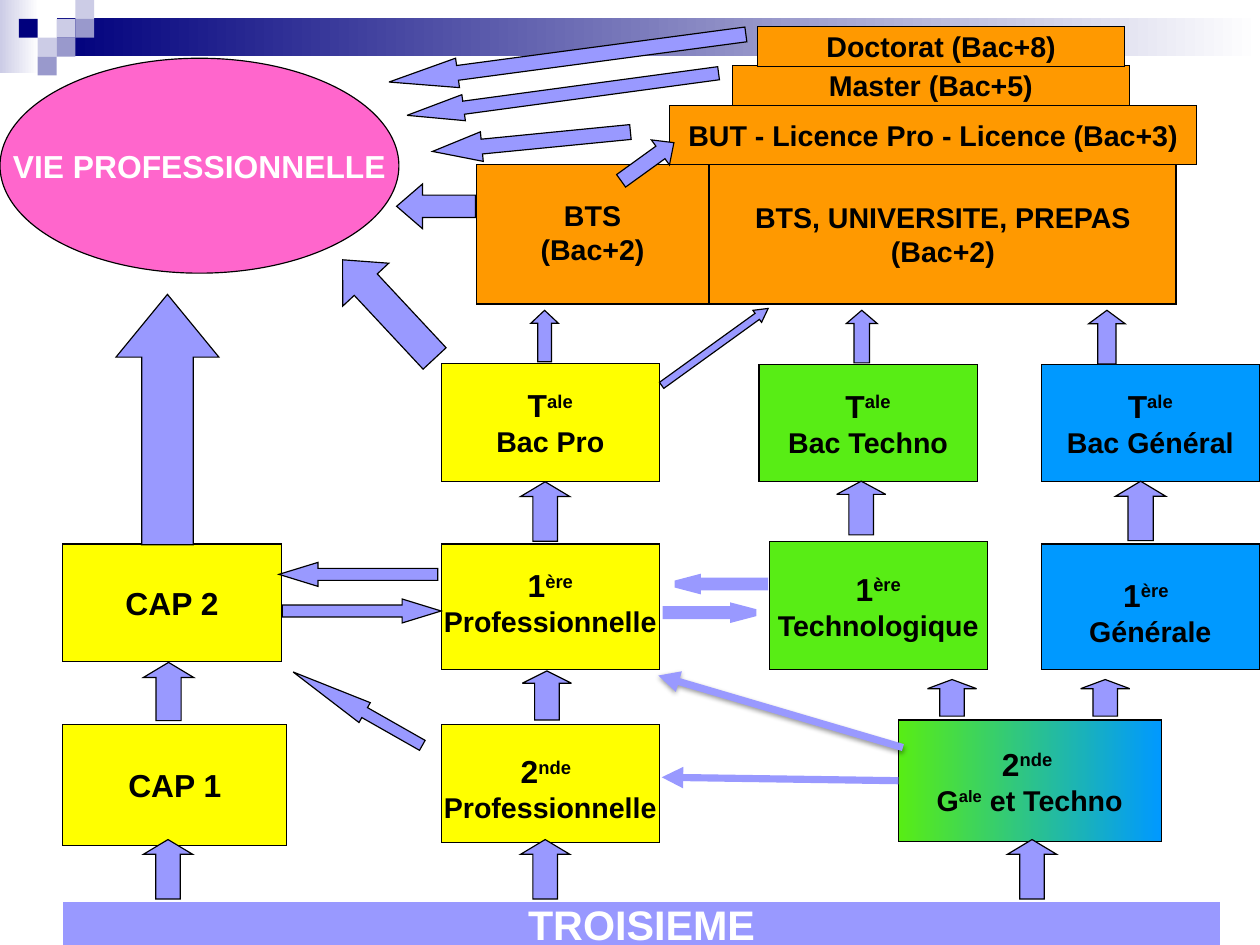
import lxml.etree
import pptx
import pptx.dml.color
import pptx.enum.shapes
import pptx.enum.text
import pptx.oxml
import pptx.oxml.ns
import pptx.util

Inches = pptx.util.Inches
Pt = pptx.util.Pt
RGBColor = pptx.dml.color.RGBColor
SHAPE = pptx.enum.shapes.MSO_SHAPE

BLACK = RGBColor(0x00, 0x00, 0x00)
WHITE = RGBColor(0xFF, 0xFF, 0xFF)
NAVY = RGBColor(0x00, 0x00, 0x7D)
PALE = RGBColor(0xCC, 0xCC, 0xE6)
SLATE = RGBColor(0x99, 0x99, 0xCC)
LILAC = RGBColor(0x99, 0x99, 0xFF)
YELLOW = RGBColor(0xFF, 0xFF, 0x00)
GREEN = RGBColor(0x58, 0xED, 0x15)
BLUE = RGBColor(0x00, 0x99, 0xFF)
ORANGE = RGBColor(0xFF, 0x99, 0x00)
PINK = RGBColor(0xFF, 0x66, 0xCC)


def add_filled(kind, left, top, width, height, colors, line_color=None, line_width=0.75):
    """Draw a shape filled with one colour, or with a left-to-right gradient of two."""
    shape = page.shapes.add_shape(kind, left, top, width, height)
    shape.shadow.inherit = False
    if len(colors) == 1:
        shape.fill.solid()
        shape.fill.fore_color.rgb = colors[0]
    else:
        shape.fill.gradient()
        shape.fill.gradient_angle = 0
        for stop, color in zip(shape.fill.gradient_stops, colors):
            stop.color.rgb = color
    if line_color is None:
        shape.line.fill.background()
    else:
        shape.line.color.rgb = line_color
        shape.line.width = Pt(line_width)
        corner = lxml.etree.SubElement(shape.line._get_or_add_ln(), pptx.oxml.ns.qn("a:miter"))
        corner.set("lim", "800000")
    return shape


def write_label(shape, lines, color, shift):
    """Write (text, size) lines; ^ switches superscript on and off; shift moves the text down."""
    frame = shape.text_frame
    frame.word_wrap = False
    frame.vertical_anchor = pptx.enum.text.MSO_ANCHOR.MIDDLE
    frame.margin_left = frame.margin_right = Inches(0.11)
    frame.margin_top = Inches(0.06 + max(0, 2 * shift))
    frame.margin_bottom = Inches(0.06 + max(0, -2 * shift))
    for number, (text, size) in enumerate(lines):
        para = frame.add_paragraph() if number else frame.paragraphs[0]
        para.alignment = pptx.enum.text.PP_ALIGN.CENTER
        for position, piece in enumerate(text.split("^")):
            span = para.add_run()
            span.text = piece
            span.font.name = "Arial"
            span.font.size = Pt(size)
            span.font.bold = True
            span.font.color.rgb = color
            if position % 2:
                span.font._element.set("baseline", "30000")


# The page is 28 by 21 cm, in whole steps of 1/576 inch
deck = pptx.Presentation()
deck.slide_width = Inches(6350 / 576)
deck.slide_height = Inches(4762 / 576)
page = deck.slides.add_slide(deck.slide_layouts[6])

# Header band and its mosaic of squares
add_filled(SHAPE.RECTANGLE, 0, 0, Inches(0.34), Inches(0.64), [PALE, WHITE])
add_filled(SHAPE.RECTANGLE, Inches(0.5), Inches(0.16), Inches(10.53), Inches(0.33), [NAVY, WHITE])
square = Inches(0.66) // 4
for column, row, color in [(3, 1, PALE), (4, 0, PALE), (4, 1, SLATE), (2, 2, PALE),
                           (1, 1, NAVY), (3, 2, SLATE), (2, 3, SLATE)]:
    add_filled(SHAPE.RECTANGLE, column * square, row * square, square, square, [color])

ground = add_filled(SHAPE.RECTANGLE, Inches(0.56), Inches(7.9), Inches(10.11), Inches(0.37),
                    [LILAC], LILAC)
write_label(ground, [("TROISIEME", 26)], WHITE, 0)
career = add_filled(SHAPE.OVAL, 0, Inches(0.51), Inches(3.49), Inches(1.88), [PINK], BLACK)
write_label(career, [("VIE PROFESSIONNELLE", 20)], WHITE, 0)

# Classes and diplomas: left, top, width, height, colours, lines, text shift
stages = [
    (0.55, 6.34, 1.96, 1.06, [YELLOW], [("CAP 1", 20)], 0),
    (3.86, 6.34, 1.91, 1.03, [YELLOW], [("2^nde^ ", 20), ("Professionnelle", 18)], 0.04),
    (7.86, 6.3, 2.3, 1.06, [GREEN, BLUE], [("2^nde ", 20), ("G^ale^ et Techno", 18)], 0),
    (6.73, 4.74, 1.91, 1.12, [GREEN], [("1^ère", 20), ("Technologique", 18)], 0),
    (0.55, 4.76, 1.91, 1.03, [YELLOW], [("CAP 2", 20)], 0),
    (3.86, 4.76, 1.91, 1.1, [YELLOW], [("1^ère", 20), ("Professionnelle", 18)], -0.04),
    (6.64, 3.19, 1.91, 1.02, [GREEN], [("T^ale", 20), ("Bac Techno", 18)], 0),
    (9.11, 4.76, 1.91, 1.1, [BLUE], [("1^ère^ ", 20), ("Générale", 18)], 0.04),
    (9.11, 3.19, 1.91, 1.02, [BLUE], [("T^ale", 20), ("Bac Général", 18)], 0),
    (3.86, 3.18, 1.91, 1.03, [YELLOW], [("T^ale", 20), ("Bac Pro", 18)], 0),
    (4.17, 1.44, 2.03, 1.22, [ORANGE], [("BTS", 18), ("(Bac+2)", 18)], -0.02),
    (6.21, 1.44, 4.08, 1.22, [ORANGE], [("BTS, UNIVERSITE, PREPAS", 18), ("(Bac+2)", 18)], 0),
    (5.86, 0.92, 4.61, 0.52, [ORANGE], [("BUT - Licence Pro - Licence (Bac+3)", 18)], 0),
    (6.41, 0.57, 3.47, 0.35, [ORANGE], [("Master (Bac+5)", 18)], 0),
    (6.63, 0.23, 3.21, 0.35, [ORANGE], [("Doctorat (Bac+8)", 18)], 0),
]
boxes = []
for left, top, width, height, colors, lines, shift in stages:
    box = add_filled(SHAPE.RECTANGLE, Inches(left), Inches(top), Inches(width), Inches(height),
                     colors, BLACK)
    write_label(box, lines, BLACK, shift)
    boxes.append(box)

# Block arrows: left, top, length, thickness, rotation, head length ratio
upward_arrows = [
    (0.37, 3.22, 2.19, 0.9, 0.61), (4.54, 2.82, 0.45, 0.24, 0.47), (7.3, 4.23, 0.47, 0.43, 0.27),
    (7.31, 2.81, 0.46, 0.27, 0.43), (9.45, 2.79, 0.47, 0.32, 0.37), (9.72, 4.25, 0.52, 0.44, 0.3),
    (4.51, 4.26, 0.52, 0.43, 0.3), (4.57, 5.87, 0.43, 0.43, 0.25), (1.22, 5.83, 0.51, 0.44, 0.3),
]
upward_arrows += [(left, 5.89, 0.32, 0.43, 0.25) for left in (8.17, 9.51)]
upward_arrows += [(left, 7.39, 0.52, 0.43, 0.3) for left in (1.21, 4.51, 8.77)]
arrows = [(left, top, length, thickness, 90, head)
          for left, top, length, thickness, head in upward_arrows]
arrows += [
    (2.47, 5.24, 1.39, 0.21, 180, 1.63), (2.44, 4.92, 1.39, 0.21, 0, 1.63),
    (2.81, 2.43, 1.18, 0.55, 47, 0.54), (5.38, 1.28, 0.57, 0.27, 144.2, 0.54),
    (3.78, 1.11, 1.74, 0.26, 354.4, 1.67), (3.55, 0.71, 2.75, 0.23, 352.3, 2.17),
    (3.39, 0.38, 3.15, 0.26, 352.4, 2.33), (5.68, 2.97, 1.15, 0.13, 144.2, 0.91),
    (3.47, 1.61, 0.69, 0.39, 0, 0.58), (2.48, 6.1, 1.3, 0.2, 29.6, 3.6),
]
thick_arrows = [(5.83, 5.31, 0.78, 0.1, 180, 1.91), (5.91, 5.06, 0.78, 0.1, 0, 1.91)]
for group, line_color, line_width in [(arrows, BLACK, 0.75), (thick_arrows, LILAC, 4.5)]:
    for left, top, length, thickness, rotation, head in group:
        arrow = add_filled(SHAPE.LEFT_ARROW, Inches(left), Inches(top), Inches(length),
                           Inches(thickness), [LILAC], line_color, line_width)
        arrow.rotation = rotation
        arrow.adjustments[0] = 0.5
        arrow.adjustments[1] = head

# Line arrows from the general 2nde to the vocational track
links = []
for start_x, start_y, end_x, end_y in [(7.86, 6.81, 5.79, 6.8), (7.9, 6.54, 5.76, 5.91)]:
    link = page.shapes.add_connector(pptx.enum.shapes.MSO_CONNECTOR.STRAIGHT, Inches(start_x),
                                     Inches(start_y), Inches(end_x), Inches(end_y))
    link.line.color.rgb = LILAC
    link.line.width = Pt(4.5)
    tail = lxml.etree.SubElement(link.line._get_or_add_ln(), pptx.oxml.ns.qn("a:tailEnd"))
    tail.set("type", "triangle")
    effects = lxml.etree.SubElement(link._element.spPr, pptx.oxml.ns.qn("a:effectLst"))
    links.append((link, effects))

level_link = links[0][0]
level_link.begin_connect(boxes[2], 1)
links[1][1].append(pptx.oxml.parse_xml(
    f'<a:outerShdw {pptx.oxml.ns.nsdecls("a")} blurRad="{Pt(3.1)}" dist="{Pt(1.6)}" dir="5400000">'
    '<a:srgbClr val="000000"><a:alpha val="38000"/></a:srgbClr></a:outerShdw>'))

deck.save("out.pptx")
